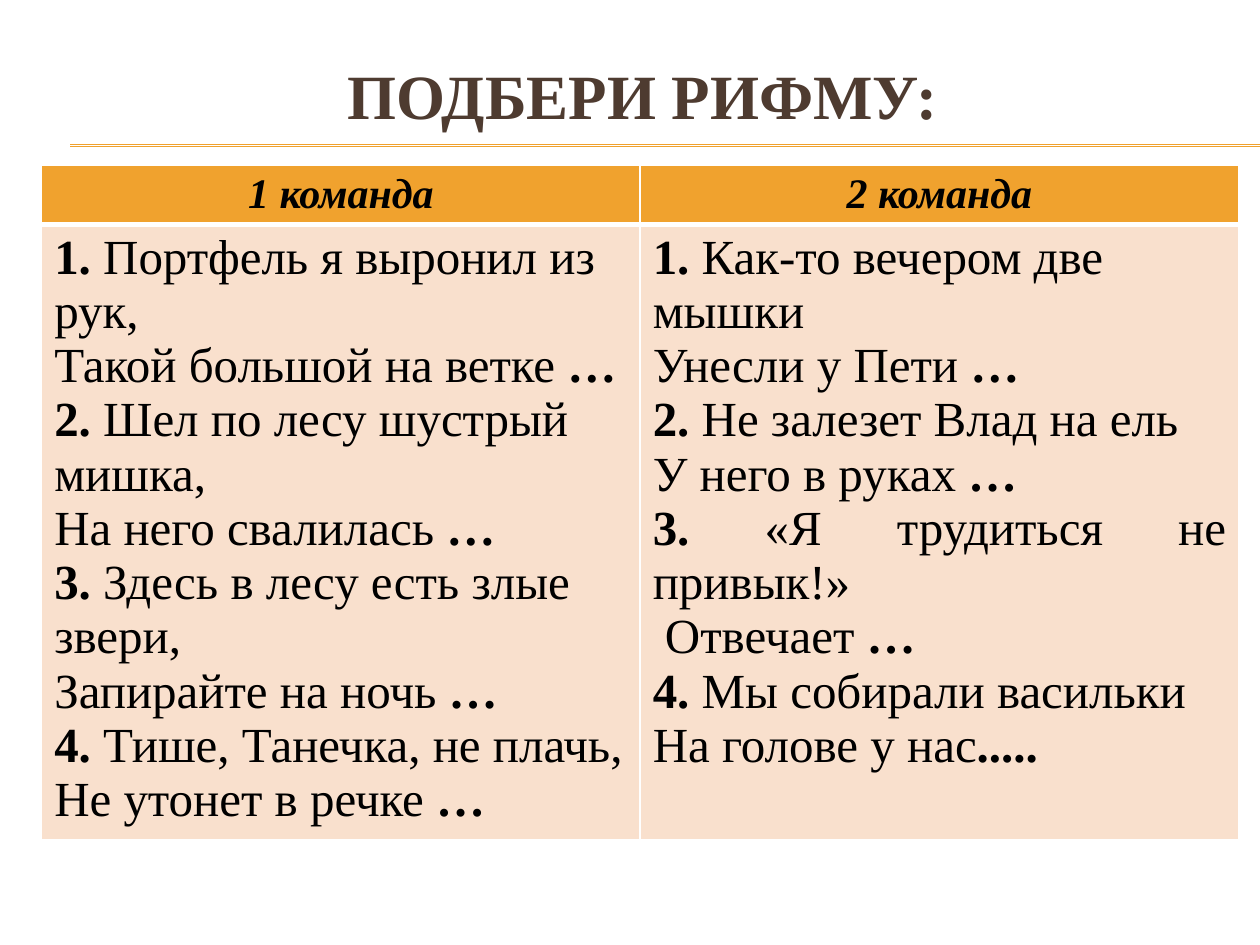
from lxml import etree
from pptx import Presentation
from pptx.dml.color import RGBColor
from pptx.enum.shapes import MSO_CONNECTOR
from pptx.enum.text import MSO_ANCHOR, PP_ALIGN
from pptx.oxml.ns import qn
from pptx.util import Cm, Pt

STRAIGHT = MSO_CONNECTOR.STRAIGHT
MIDDLE = MSO_ANCHOR.MIDDLE
LEFT, CENTER, JUSTIFY = PP_ALIGN.LEFT, PP_ALIGN.CENTER, PP_ALIGN.JUSTIFY

ORANGE, PEACH, BROWN = "F0A22E", "F9E0CD", "4E3B30"
BLACK, WHITE = "000000", "FFFFFF"
FONT = "Times New Roman"
TITLE_FORMAT = {"name": FONT, "size": Pt(36), "bold": True}
HEADER_FORMAT = {"name": FONT, "size": Pt(24), "bold": True, "italic": True}
VERSE_FORMAT = {"name": FONT, "size": Pt(28), "italic": False}

TEAMS = [
    ("1 команда", [
        (LEFT, "1. ", "Портфель я выронил из рук,", ""),
        (LEFT, "", "Такой большой на ветке ", "…"),
        (LEFT, "2. ", "Шел по лесу шустрый мишка,", ""),
        (LEFT, "", "На него свалилась ", "…"),
        (LEFT, "3. ", "Здесь в лесу есть злые звери,", ""),
        (LEFT, "", "Запирайте на ночь ", "…"),
        (LEFT, "4. ", "Тише, Танечка, не плачь,", ""),
        (LEFT, "", "Не утонет в речке ", "…"),
    ]),
    ("2 команда", [
        (LEFT, "1. ", "Как-то вечером две мышки", ""),
        (LEFT, "", "Унесли у Пети ", "…"),
        (LEFT, "2. ", "Не залезет Влад на ель", ""),
        (JUSTIFY, "", "У него в руках ", "… "),
        (JUSTIFY, "3. ", "«Я трудиться не привык!»", ""),
        (JUSTIFY, "", " Отвечает ", "… "),
        (JUSTIFY, "4. ", "Мы собирали васильки", ""),
        (JUSTIFY, "", "На голове у нас", "....."),
    ]),
]


def set_color(color_format, value):
    color_format.rgb = RGBColor.from_string(value)


def add_run(paragraph, text, color, format_values):
    run = paragraph.add_run()
    run.text = text
    for attribute, value in format_values.items():
        setattr(run.font, attribute, value)
    set_color(run.font.color, color)


def format_cell(cell, color, bottom_width):
    properties = cell._tc.get_or_add_tcPr()
    for side, width in (("L", 1), ("R", 1), ("T", 1), ("B", bottom_width)):
        border = etree.SubElement(properties, qn(f"a:ln{side}"), w=str(Pt(width)))
        fill = etree.SubElement(border, qn("a:solidFill"))
        etree.SubElement(fill, qn("a:srgbClr"), val=WHITE)
    cell.fill.solid()
    set_color(cell.fill.fore_color, color)


def place_title(slide, left, top, width, height):
    title = slide.shapes.title
    box = {"left": left, "top": top, "width": width, "height": height}
    for attribute, value in box.items():
        setattr(title, attribute, value)
    title.text_frame.vertical_anchor = MIDDLE
    paragraph = title.text_frame.paragraphs[0]
    paragraph.alignment = CENTER
    add_run(paragraph, "ПОДБЕРИ РИФМУ:", BROWN, TITLE_FORMAT)


def add_rules(slide, left, top, width, gap):
    for y in (top, top + gap):
        rule = slide.shapes.add_connector(STRAIGHT, left, y, left + width, y)
        set_color(rule.line.color, ORANGE)
        rule.line.width = Pt(0.75)
        etree.SubElement(rule._element.spPr, qn("a:effectLst"))


def add_verses(cell, verses):
    frame = cell.text_frame
    for index, (alignment, number, words, ending) in enumerate(verses):
        paragraph = frame.add_paragraph() if index else frame.paragraphs[0]
        paragraph.alignment = alignment
        for text, bold in ((number, True), (words, False), (ending, True)):
            if text:
                add_run(paragraph, text, BLACK, {**VERSE_FORMAT, "bold": bold})


def add_team_table(slide, left, top, width, header_height, body_height):
    table = slide.shapes.add_table(
        2, len(TEAMS), left, top, width, header_height + body_height).table
    table.rows[0].height = header_height
    table.rows[1].height = body_height
    for column, (team, verses) in enumerate(TEAMS):
        header, body = table.cell(0, column), table.cell(1, column)
        format_cell(header, ORANGE, 3)
        format_cell(body, PEACH, 1)
        paragraph = header.text_frame.paragraphs[0]
        paragraph.alignment = CENTER
        add_run(paragraph, team, BLACK, HEADER_FORMAT)
        add_verses(body, verses)


def main():
    presentation = Presentation()
    presentation.slide_width, presentation.slide_height = Cm(25.4), Cm(19.05)
    slide = presentation.slides.add_slide(presentation.slide_layouts[5])
    add_rules(slide, Cm(1.42), Cm(2.92), Cm(23.98), Cm(0.03))
    place_title(slide, Cm(0.89), Cm(0.74), Cm(24.13), Cm(2.34))
    add_team_table(slide, Cm(0.84), Cm(3.33), Cm(24.13), Cm(1.19), Cm(12.4))
    presentation.save("out.pptx")


if __name__ == "__main__":
    main()
